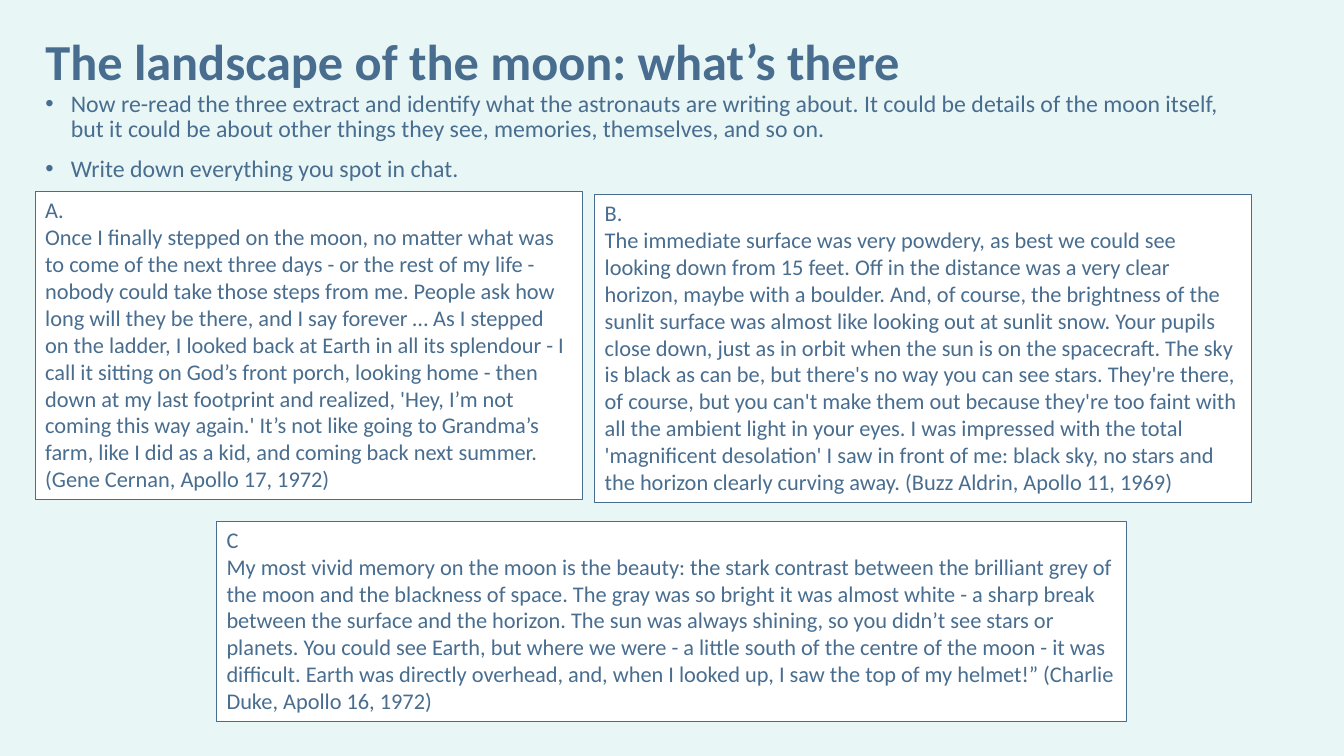
"""Build the slide on astronauts' accounts of the moon's landscape."""

from dataclasses import dataclass

from lxml import etree
from pptx import Presentation
from pptx import util as u
from pptx.dml import color
from pptx.enum import shapes, text
from pptx.oxml import ns


@dataclass(frozen=True)
class Theme:
    font: str = "Calibri"
    ink: color.RGBColor = color.RGBColor(0x48, 0x6D, 0x8F)
    paper: color.RGBColor = color.RGBColor(0xFF, 0xFF, 0xFF)
    background: color.RGBColor = color.RGBColor(0xE9, 0xF6, 0xF6)
    title_size: float = 36
    task_size: float = 17
    extract_size: float = 16
    border: float = 0.75
    line_spacing: float = 0.9
    task_gap: float = 10


@dataclass(frozen=True)
class Frame:
    left: float
    top: float
    width: float
    height: float

    def lengths(self) -> tuple:
        return tuple(u.Cm(n) for n in (self.left, self.top, self.width, self.height))


@dataclass(frozen=True)
class Extract:
    label: str
    words: str
    frame: Frame


THEME = Theme()
TITLE = "The landscape of the moon: what’s there"
TITLE_FRAME = Frame(0.89, 0.58, 30.63, 2.06)
TASK_FRAME = Frame(0.89, 2.18, 30.63, 1.98)
TASKS = (
    "Now re-read the three extract and identify what the astronauts are writing about. "
    "It could be details of the moon itself, but it could be about other things they see, "
    "memories, themselves, and so on.",
    "Write down everything you spot in chat.",
)
EXTRACTS = (
    Extract(
        "C",
        "My most vivid memory on the moon is the beauty: the stark contrast between the "
        "brilliant grey of the moon and the blackness of space. The gray was so bright it was "
        "almost white - a sharp break between the surface and the horizon. The sun was always "
        "shining, so you didn’t see stars or planets. You could see Earth, but where we were - "
        "a little south of the centre of the moon - it was difficult. Earth was directly "
        "overhead, and, when I looked up, I saw the top of my helmet!” "
        "(Charlie Duke, Apollo 16, 1972)",
        Frame(5.46, 13.13, 22.94, 5.05),
    ),
    Extract(
        "B.",
        "The immediate surface was very powdery, as best we could see looking down from 15 "
        "feet. Off in the distance was a very clear horizon, maybe with a boulder. And, of "
        "course, the brightness of the sunlit surface was almost like looking out at sunlit "
        "snow. Your pupils close down, just as in orbit when the sun is on the spacecraft. The "
        "sky is black as can be, but there's no way you can see stars. They're there, of "
        "course, but you can't make them out because they're too faint with all the ambient "
        "light in your eyes. I was impressed with the total 'magnificent desolation' I saw in "
        "front of me: black sky, no stars and the horizon clearly curving away. "
        "(Buzz Aldrin, Apollo 11, 1969)",
        Frame(14.99, 4.9, 16.54, 7.77),
    ),
    Extract(
        "A.",
        "Once I finally stepped on the moon, no matter what was to come of the next three days "
        "- or the rest of my life - nobody could take those steps from me. People ask how long "
        "will they be there, and I say forever … As I stepped on the ladder, I looked back at "
        "Earth in all its splendour - I call it sitting on God’s front porch, looking home - "
        "then down at my last footprint and realized, 'Hey, I’m not coming this way again.' "
        "It’s not like going to Grandma’s farm, like I did as a kid, and coming back next "
        "summer. (Gene Cernan, Apollo 17, 1972)",
        Frame(0.89, 4.83, 13.79, 7.77),
    ),
)


def place(box, frame: Frame) -> None:
    box.left, box.top, box.width, box.height = frame.lengths()


def add_span(para, words: str, size: float, bold: bool = False) -> None:
    span = para.add_run()
    span.text = words
    span.font.name = THEME.font
    span.font.size = u.Pt(size)
    span.font.bold = bold
    span.font.color.rgb = THEME.ink


def add_para(frame, index: int):
    para = frame.add_paragraph() if index else frame.paragraphs[0]
    para.alignment = text.PP_ALIGN.LEFT
    para.space_before = u.Pt(0)
    return para


def add_bullet(para) -> None:
    settings = para._p.get_or_add_pPr()
    settings.set("marL", str(u.Cm(0.64)))
    settings.set("indent", str(u.Cm(-0.64)))
    etree.SubElement(settings, ns.qn("a:buFont"), typeface="Arial")
    etree.SubElement(settings, ns.qn("a:buChar"), char="•")


def fill_title(box) -> None:
    place(box, TITLE_FRAME)
    frame = box.text_frame
    frame.auto_size = text.MSO_AUTO_SIZE.NONE
    frame.vertical_anchor = text.MSO_ANCHOR.MIDDLE
    para = add_para(frame, 0)
    para.line_spacing = THEME.line_spacing
    add_span(para, TITLE, THEME.title_size, bold=True)


def fill_tasks(box) -> None:
    place(box, TASK_FRAME)
    frame = box.text_frame
    frame.auto_size = text.MSO_AUTO_SIZE.NONE
    for index, task in enumerate(TASKS):
        para = add_para(frame, index)
        para.line_spacing = THEME.line_spacing
        para.space_before = u.Pt(THEME.task_gap if index else 0)
        add_bullet(para)
        add_span(para, task, THEME.task_size)


def add_extract(page, extract: Extract) -> None:
    box = page.shapes.add_shape(shapes.MSO_SHAPE.RECTANGLE, *extract.frame.lengths())
    box.shadow.inherit = False
    box.fill.solid()
    box.fill.fore_color.rgb = THEME.paper
    box.line.color.rgb = THEME.ink
    box.line.width = u.Pt(THEME.border)
    frame = box.text_frame
    frame.word_wrap = True
    frame.auto_size = text.MSO_AUTO_SIZE.SHAPE_TO_FIT_TEXT
    frame.vertical_anchor = text.MSO_ANCHOR.TOP
    for index, words in enumerate((extract.label, extract.words)):
        add_span(add_para(frame, index), words, THEME.extract_size)


def main() -> None:
    deck = Presentation()
    deck.slide_width, deck.slide_height = u.Cm(33.87), u.Cm(19.05)
    page = deck.slides.add_slide(deck.slide_layouts[1])
    page.background.fill.solid()
    page.background.fill.fore_color.rgb = THEME.background
    fill_title(page.shapes.title)
    fill_tasks(page.placeholders[1])
    for extract in EXTRACTS:
        add_extract(page, extract)
    deck.save("out.pptx")


if __name__ == "__main__":
    main()
